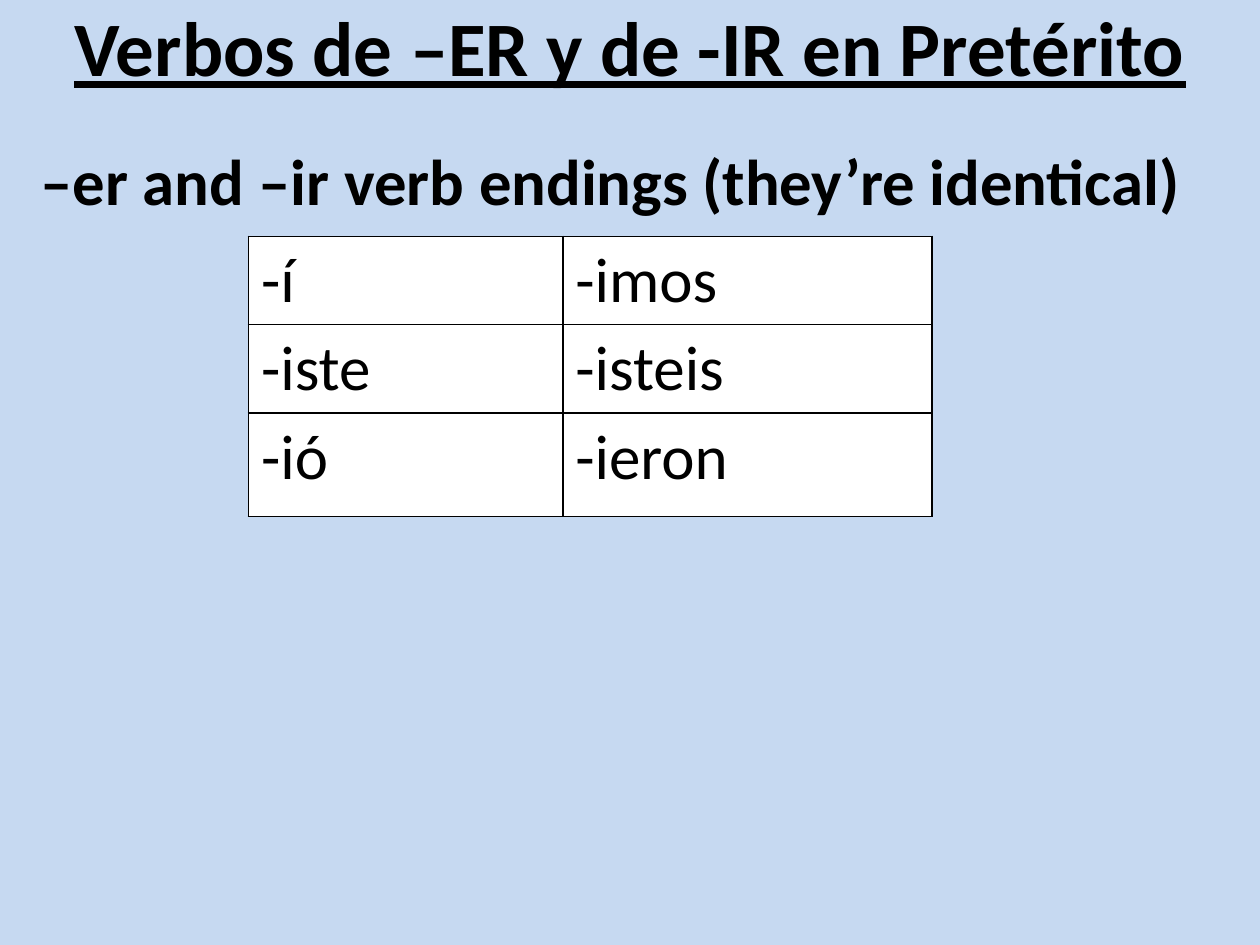
import dataclasses

import lxml.etree
import pptx
import pptx.dml.color
import pptx.enum.text
import pptx.oxml.ns
import pptx.util

Pt = pptx.util.Pt
Align = pptx.enum.text.PP_ALIGN
Anchor = pptx.enum.text.MSO_ANCHOR


@dataclasses.dataclass(frozen=True)
class Theme:
    """Colours, font and type sizes of the slide."""
    background: str = "C6D9F1"
    ink: str = "000000"
    cell: str = "FFFFFF"
    font: str = "Calibri"
    title: float = 44
    heading: float = 37
    ending: float = 36
    border: float = 1


THEME = Theme()
ENDINGS = [("-í", "-imos"), ("-iste", "-isteis"), ("-ió", "-ieron")]


def paint(fill, colour):
    """Make a fill solid in the given colour."""
    fill.solid()
    fill.fore_color.rgb = pptx.dml.color.RGBColor.from_string(colour)


def write(frame, text, *, size, bold=False, underline=False, align=Align.LEFT):
    """Write one formatted paragraph into a text frame."""
    para = frame.paragraphs[0]
    para.alignment = align
    span = para.add_run()
    span.text = text
    span.font.name = THEME.font
    span.font.size = Pt(size)
    span.font.bold = bold
    span.font.underline = underline
    paint(span.font.fill, THEME.ink)


def add_line_of_text(page, box, text, *, anchor=Anchor.TOP, **format):
    """Place a wrapping text box in the given box."""
    frame = page.shapes.add_textbox(*map(Pt, box)).text_frame
    frame.word_wrap = True
    frame.vertical_anchor = anchor
    write(frame, text, **format)


def add_borders(cell):
    """Draw a line on all four sides of a table cell."""
    properties = cell._tc.get_or_add_tcPr()
    qn = pptx.oxml.ns.qn
    for index, side in enumerate(("a:lnL", "a:lnR", "a:lnT", "a:lnB")):
        line = lxml.etree.Element(qn(side), w=str(Pt(THEME.border)))
        fill = lxml.etree.SubElement(line, qn("a:solidFill"))
        lxml.etree.SubElement(fill, qn("a:srgbClr"), val=THEME.ink)
        properties.insert(index, line)


def add_endings_table(page, box, rows, column_shares, row_shares):
    """Place the table of endings, sharing out the box by column and row."""
    left, top, width, height = box
    table = page.shapes.add_table(len(rows), len(rows[0]), *map(Pt, box)).table
    table.first_row = table.horz_banding = False
    for column, share in zip(table.columns, column_shares):
        column.width = Pt(width * share)
    for row, share, endings in zip(table.rows, row_shares, rows):
        row.height = Pt(height * share)
        for cell, ending in zip(row.cells, endings):
            paint(cell.fill, THEME.cell)
            add_borders(cell)
            write(cell.text_frame, ending, size=THEME.ending)


def build_slide(page, box):
    """Place the title, heading and endings table in the slide's box."""
    left, top, width, height = box
    paint(page.background.fill, THEME.background)
    add_line_of_text(page, (left + 16, top + 77, width - 16, 83),
                     "–er and –ir verb endings (they’re identical)",
                     size=THEME.heading, bold=True)
    add_endings_table(page, (left + 142, top + 135, 390.5, 160), ENDINGS,
                      (0.46, 0.54), (0.315, 0.315, 0.37))
    add_line_of_text(page, (left, top - 22.5, width, 97.5),
                     "Verbos de –ER y de -IR en Pretérito",
                     size=THEME.title, bold=True, underline=True,
                     align=Align.CENTER, anchor=Anchor.MIDDLE)


def main():
    """Build and save the deck."""
    deck = pptx.Presentation()
    width, height = 720, 540
    deck.slide_width, deck.slide_height = Pt(width), Pt(height)
    page = deck.slides.add_slide(deck.slide_layouts[6])
    build_slide(page, (0, 0, width, height))
    deck.save("out.pptx")


if __name__ == "__main__":
    main()
